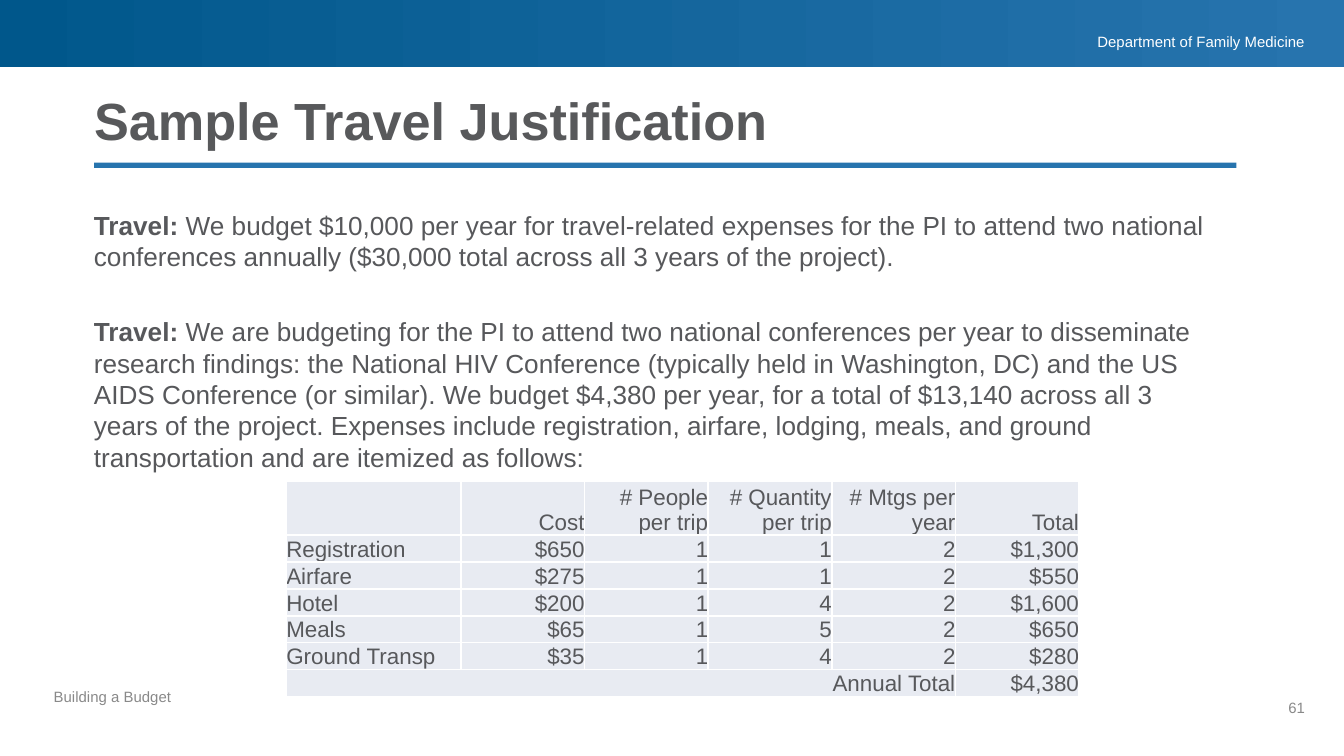
from lxml import etree
from pptx import Presentation
from pptx.dml.color import RGBColor
from pptx.enum.shapes import MSO_SHAPE
from pptx.enum.text import MSO_ANCHOR, PP_ALIGN
from pptx.oxml.ns import qn
from pptx.util import Pt

PX = 9144
FONT = "Arial"
RECT = MSO_SHAPE.RECTANGLE
LEFT, RIGHT = PP_ALIGN.LEFT, PP_ALIGN.RIGHT
TOP, BOTTOM = MSO_ANCHOR.TOP, MSO_ANCHOR.BOTTOM
COLORS = {"navy": "00578B", "blue": "2774AE", "white": "FFFFFF", "title": "58595B",
          "text": "57585B", "gray": "898989", "cell": "E8EBF2"}
BRIEF = ("We budget $10,000 per year for travel-related expenses for the PI to attend "
         "two national conferences annually ($30,000 total across all 3 years of the "
         "project).")
DETAIL = ("We are budgeting for the PI to attend two national conferences per year to "
          "disseminate research findings: the National HIV Conference (typically held in "
          "Washington, DC) and the US AIDS Conference (or similar). We budget $4,380 per "
          "year, for a total of $13,140 across all 3 years of the project. Expenses "
          "include registration, airfare, lodging, meals, and ground transportation and "
          "are itemized as follows:")
COSTS = [
    ["", "Cost", "# People per trip", "# Quantity per trip", "# Mtgs per year", "Total"],
    ["Registration", "$650", "1", "1", "2", "$1,300"],
    ["Airfare", "$275", "1", "1", "2", "$550"],
    ["Hotel", "$200", "1", "4", "2", "$1,600"],
    ["Meals", "$65", "1", "5", "2", "$650"],
    ["Ground Transp", "$35", "1", "4", "2", "$280"],
    ["Annual Total", "", "", "", "", "$4,380"],
]


def rgb(name):
    """Return the named colour."""
    return RGBColor.from_string(COLORS[name])


def scale(box):
    """Turn a box in px into EMU."""
    return [n * PX for n in box]


def style(para, size, color, align=LEFT, bold=False):
    """Format a paragraph and its runs."""
    para.alignment = align
    for run in para.runs:
        run.font.name = FONT
        run.font.size = Pt(size)
        run.font.bold = bold
        run.font.color.rgb = rgb(color)


def inset(frame, left=0, top=0, right=0, bottom=0):
    """Set the margins of a text frame or cell in px."""
    frame.margin_left, frame.margin_top = left * PX, top * PX
    frame.margin_right, frame.margin_bottom = right * PX, bottom * PX


def add_bar(slide, box):
    """Add a plain rectangle and return it."""
    bar = slide.shapes.add_shape(RECT, *scale(box))
    bar.shadow.inherit = False
    bar.line.fill.background()
    return bar


def add_label(slide, box, text, color, align=LEFT, pads=(0, 0, 0, 0)):
    """Add a small line of text."""
    frame = slide.shapes.add_textbox(*scale(box)).text_frame
    frame.word_wrap = True
    frame.vertical_anchor = TOP
    inset(frame, *pads)
    frame.text = text
    style(frame.paragraphs[0], 8, color, align)


def add_header(slide, box):
    """Add the gradient band with the department name."""
    x, y, w, h = box
    fill = add_bar(slide, box).fill
    fill.gradient()
    fill.gradient_angle = 0
    for stop, name, place in zip(fill.gradient_stops, ("navy", "blue"), (0, 1)):
        stop.color.rgb = rgb(name)
        stop.position = place
    add_label(slide, (x + w - 280, y + 23, 251, 14), "Department of Family Medicine",
              "white", RIGHT, (10, 1, 0, 1))


def add_title(slide, box):
    """Place the title and the rule below it."""
    x, y, w, h = box
    title = slide.shapes.title
    title.left, title.top, title.width, title.height = scale(box)
    frame = title.text_frame
    frame.word_wrap = True
    frame.vertical_anchor = BOTTOM
    inset(frame)
    frame.text = "Sample Travel Justification"
    para = frame.paragraphs[0]
    para.line_spacing = 0.9
    style(para, 28, "title", bold=True)
    rule = add_bar(slide, (x, y + 51, w, 4))
    rule.fill.solid()
    rule.fill.fore_color.rgb = rgb("blue")


def add_note(slide, box, text):
    """Add a justification with its bold lead word."""
    frame = slide.shapes.add_textbox(*scale(box)).text_frame
    frame.word_wrap = True
    para = frame.paragraphs[0]
    for part in ("Travel: ", text):
        para.add_run().text = part
    style(para, 14, "text")
    para.runs[0].font.bold = True


def add_edges(cell):
    """Draw white borders around a cell."""
    props = cell._tc.get_or_add_tcPr()
    for i, side in enumerate(("lnL", "lnR", "lnT", "lnB")):
        line = etree.Element(qn(f"a:{side}"), w=str(Pt(1)))
        fill = etree.SubElement(line, qn("a:solidFill"))
        etree.SubElement(fill, qn("a:srgbClr"), val=COLORS["white"])
        props.insert(i, line)


def add_costs(slide, box):
    """Add the cost table with its merged total row."""
    x, y, w, h = box
    count, cols = len(COSTS), len(COSTS[0])
    table = slide.shapes.add_table(count, cols, *scale(box)).table
    table.first_row = table.horz_banding = False
    for i, col in enumerate(table.columns):
        col.width = (92 if i else w - 92 * (cols - 1)) * PX
    unit = h // (count + 1)
    for i, row in enumerate(table.rows):
        row.height = (unit if i else 2 * unit) * PX
    last = count - 1
    table.cell(last, 0).merge(table.cell(last, cols - 2))
    for r, row in enumerate(COSTS):
        for c, text in enumerate(row):
            cell = table.cell(r, c)
            cell.fill.solid()
            cell.fill.fore_color.rgb = rgb("cell")
            cell.vertical_anchor = BOTTOM
            inset(cell)
            add_edges(cell)
            cell.text = text
            align = RIGHT if c or r == last else LEFT
            style(cell.text_frame.paragraphs[0], 12, "text", align)


def add_footer(slide, box):
    """Add the deck name and the page number."""
    x, y, w, h = box
    add_label(slide, (x, y, 390, h), "Building a Budget", "gray")
    add_label(slide, (x + w - 50, y + 8, 50, h), "61", "gray", RIGHT)


def main():
    """Build and save the slide."""
    deck = Presentation()
    deck.slide_width = 1000 * PX
    deck.slide_height = deck.slide_width * 9 // 16
    slide = deck.slides.add_slide(deck.slide_layouts[5])
    add_header(slide, (0, 0, 1000, 50))
    add_title(slide, (70, 70, 850, 43))
    add_note(slide, (60, 151, 861, 57), BRIEF)
    add_note(slide, (60, 230, 861, 151), DETAIL)
    add_costs(slide, (213, 358, 590, 160))
    add_footer(slide, (40, 512, 931, 40))
    deck.save("out.pptx")


if __name__ == "__main__":
    main()
